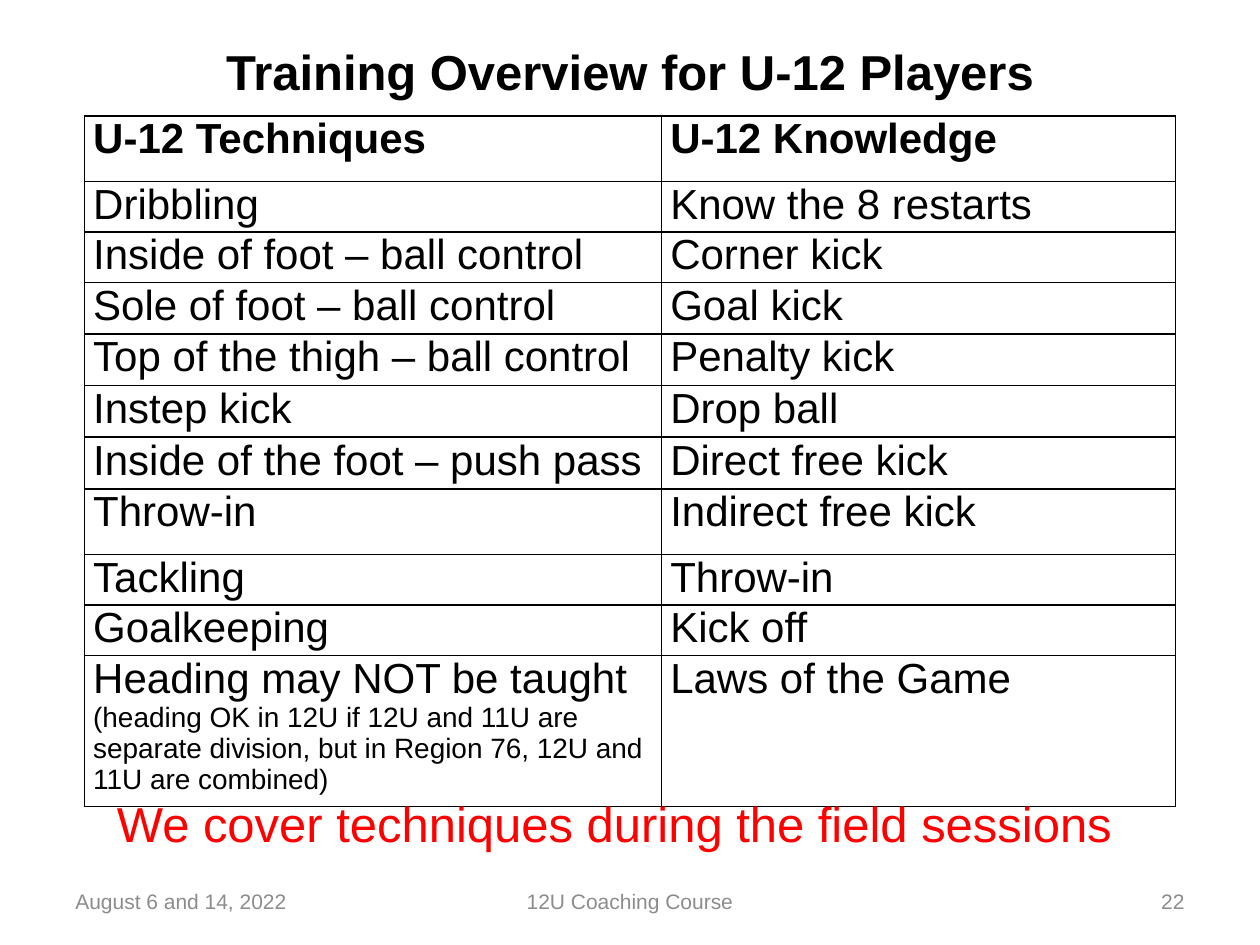
import pptx
import pptx.dml.color
import pptx.enum.text
import pptx.util
from pptx.oxml import parse_xml
from pptx.oxml.ns import nsdecls
from pptx.util import Inches

ALIGN = pptx.enum.text.PP_ALIGN
ANCHOR = pptx.enum.text.MSO_ANCHOR

ROWS = [
    ("U-12 Techniques", "U-12 Knowledge", 0.52),
    ("Dribbling", "Know the 8 restarts", 0.39),
    ("Inside of foot – ball control", "Corner kick", 0.39),
    ("Sole of foot – ball control", "Goal kick", 0.41),
    ("Top of the thigh – ball control", "Penalty kick", 0.41),
    ("Instep kick", "Drop ball", 0.41),
    ("Inside of the foot – push pass", "Direct free kick", 0.41),
    ("Throw-in", "Indirect free kick", 0.52),
    ("Tackling", "Throw-in", 0.39),
    ("Goalkeeping", "Kick off", 0.39),
    ("Heading may NOT be taught", "Laws of the Game", 0.52),
]
HEADING_NOTE = (
    "(heading OK in 12U if 12U and 11U are separate division, "
    "but in Region 76, 12U and 11U are combined)"
)


def rgb(value):
    return pptx.dml.color.RGBColor.from_string(value)


def style(p, size, color="000000", bold=False):
    for r in p.runs:
        r.font.name = "Arial"
        r.font.size = pptx.util.Pt(size)
        r.font.bold = bold
        r.font.color.rgb = rgb(color)


def add_text(s, box, text, size, color, align=ALIGN.LEFT, bold=False,
             anchor=ANCHOR.MIDDLE, wrap=True):
    sp = s.shapes.add_textbox(*map(Inches, box))
    tf = sp.text_frame
    tf.word_wrap = wrap
    tf.vertical_anchor = anchor
    tf.text = text
    p = tf.paragraphs[0]
    p.alignment = align
    style(p, size, color, bold)
    return tf


def add_title(s, box):
    tf = add_text(s, box, "Training Overview for U-12 Players", 28, "000000",
                  ALIGN.CENTER, bold=True)
    tf.margin_left = tf.margin_right = tf.margin_top = tf.margin_bottom = 0


def format_cell(cell, text, bold):
    cell.text = text
    cell.margin_left = cell.margin_right = Inches(0.07)
    cell.margin_top = cell.margin_bottom = 0
    style(cell.text_frame.paragraphs[0], 24, bold=bold)
    tcPr = cell._tc.get_or_add_tcPr()
    for side in ("lnL", "lnR", "lnT", "lnB"):
        tcPr.append(parse_xml(
            f'<a:{side} {nsdecls("a")} w="12700"><a:solidFill>'
            f'<a:srgbClr val="000000"/></a:solidFill></a:{side}>'))
    cell.fill.background()


def add_training_table(s, box):
    table = s.shapes.add_table(len(ROWS), 2, *map(Inches, box)).table
    table.first_row = table.horz_banding = False
    for column, width in zip(table.columns, (4.58, 4.08)):
        column.width = Inches(width)
    for i, (technique, knowledge, height) in enumerate(ROWS):
        table.rows[i].height = Inches(height)
        for j, text in enumerate((technique, knowledge)):
            format_cell(table.cell(i, j), text, bold=i == 0)
    p = table.cell(len(ROWS) - 1, 0).text_frame.add_paragraph()
    p.text = HEADING_NOTE
    style(p, 16)


def add_footer(s, box):
    left, top, width, height = box
    parts = [
        ("August 6 and 14, 2022", 0, 2.33, ALIGN.LEFT),
        ("12U Coaching Course", (width - 3.17) / 2, 3.17, ALIGN.CENTER),
        ("22", width - 2.33, 2.33, ALIGN.RIGHT),
    ]
    for text, offset, part_width, align in parts:
        add_text(s, (left + offset, top, part_width, height), text, 12,
                 "8C8C8C", align)


def add_closing_line(s, box):
    tf = add_text(s, box, "We cover techniques during the field sessions", 28,
                  "FF0000", anchor=ANCHOR.TOP, wrap=False)
    tf.auto_size = pptx.enum.text.MSO_AUTO_SIZE.SHAPE_TO_FIT_TEXT


def main():
    prs = pptx.Presentation()
    prs.slide_width, prs.slide_height = Inches(10), Inches(7.5)
    s = prs.slides.add_slide(prs.slide_layouts[6])
    add_title(s, (0.5, 0.3, 9, 0.53))
    add_training_table(s, (0.67, 0.92, 8.66, sum(row[2] for row in ROWS)))
    add_footer(s, (0.5, 6.95, 9, 0.4))
    add_closing_line(s, (0.83, 6.25, 8.48, 0.57))
    prs.save("out.pptx")


if __name__ == "__main__":
    main()
